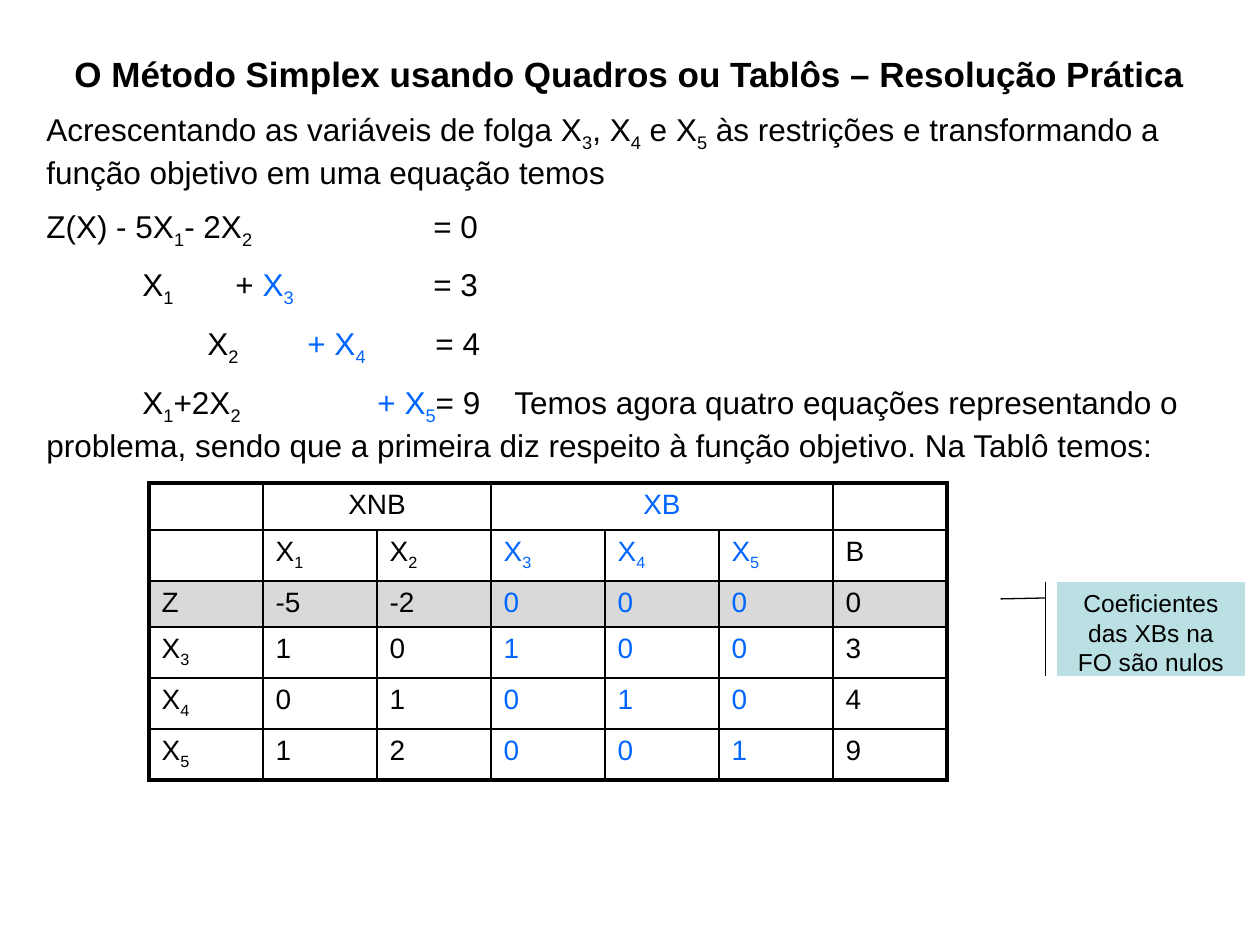
from lxml.etree import SubElement
from pptx import Presentation
from pptx.dml.color import RGBColor
from pptx.enum.shapes import MSO_SHAPE
from pptx.enum.text import MSO_ANCHOR, MSO_AUTO_SIZE, PP_ALIGN
from pptx.oxml.ns import qn
from pptx.util import Emu, Pt

PX_PER_INCH = 126
BLACK, BLUE, GREY, TEAL = "000000", "0066FF", "D9D9D9", "BBE0E3"
THIN, THICK = 1, 2.25

TITLE = "O Método Simplex usando Quadros ou Tablôs – Resolução Prática"

# In texts, "_" lowers the next character and "~" switches blue on and off.
# Each paragraph comes with the tab stops that line up its terms.
PARAGRAPHS = [
    ("Acrescentando as variáveis de folga X_3, X_4 e X_5 às restrições e "
     "transformando a função objetivo em uma equação temos", []),
    ("Z(X) - 5X_1- 2X_2\t= 0", [387]),
    ("\tX_1\t+ ~X_3~\t= 3", [96, 189, 387]),
    ("\tX_2\t~+ X_4~\t= 4", [161, 261, 389]),
    ("\tX_1+2X_2\t~+ X_5~= 9\tTemos agora quatro equações representando o "
     "problema, sendo que a primeira diz respeito à função objetivo. "
     "Na Tablô temos:", [96, 331, 468]),
]

TABLEAU = [
    ["", "XNB", "", "XB", "", "", ""],
    ["", "X_1", "X_2", "X_3", "X_4", "X_5", "B"],
    ["Z", "-5", "-2", "0", "0", "0", "0"],
    ["X_3", "1", "0", "1", "0", "0", "3"],
    ["X_4", "0", "1", "0", "1", "0", "4"],
    ["X_5", "1", "2", "0", "0", "1", "9"],
]
ROW_HEIGHTS = [45, 51, 46, 51, 51, 51]
BASIC_COLUMNS = range(3, 6)
OBJECTIVE_ROW = 2


def px(length):
    return Emu(round(length * 914400 / PX_PER_INCH))


def rgb(value):
    return RGBColor.from_string(value)


def add_span(para, text, size, color, bold=False, lowered=False):
    if not text:
        return
    span = para.add_run()
    span.text = text
    span.font.name = "Arial"
    span.font.size = Pt(size)
    span.font.bold = bold
    span.font.color.rgb = rgb(color)
    if lowered:
        span.font._element.set("baseline", "-25000")


def write(para, text, size=18, color=BLACK, bold=False, align=PP_ALIGN.LEFT):
    para.alignment = align
    for part_index, part in enumerate(text.split("~")):
        shade = BLUE if part_index % 2 else color
        for index, piece in enumerate(part.split("_")):
            if index:
                add_span(para, piece[0], size, shade, bold, lowered=True)
                piece = piece[1:]
            add_span(para, piece, size, shade, bold)


def prepare_frame(shape):
    frame = shape.text_frame
    frame.word_wrap = True
    frame.auto_size = MSO_AUTO_SIZE.NONE
    frame.vertical_anchor = MSO_ANCHOR.TOP
    return frame


def set_tabs(para, tabs):
    if tabs:
        stops = SubElement(para._p.get_or_add_pPr(), qn("a:tabLst"))
        for tab in tabs:
            SubElement(stops, qn("a:tab"), pos=str(px(tab)), algn="l")


def add_title(page, box):
    title = page.shapes.title
    title.left, title.top, title.width, title.height = map(px, box)
    write(prepare_frame(title).paragraphs[0], TITLE, size=20, bold=True,
          align=PP_ALIGN.CENTER)


def add_equations(page, box):
    # A plain text box, because inherited list indents override tab stops
    frame = prepare_frame(page.shapes.add_textbox(*map(px, box)))
    for index, (text, tabs) in enumerate(PARAGRAPHS):
        para = frame.add_paragraph() if index else frame.paragraphs[0]
        para.space_before = Pt(9 if index else 0)
        set_tabs(para, tabs)
        write(para, text)


def set_borders(cell, row, column, last_row, last_column):
    outer = {"L": column == 0, "R": column == last_column,
             "T": row == 0, "B": row == last_row}
    properties = cell._tc.get_or_add_tcPr()
    for side, is_outer in outer.items():
        width = Pt(THICK if is_outer else THIN)
        line = SubElement(properties, qn(f"a:ln{side}"), w=str(width))
        fill = SubElement(line, qn("a:solidFill"))
        SubElement(fill, qn("a:srgbClr"), val=BLACK)


def add_tableau(page, box):
    row_count, column_count = len(TABLEAU), len(TABLEAU[0])
    table = page.shapes.add_table(row_count, column_count, *map(px, box)).table
    table.first_row = table.horz_banding = False
    for column in table.columns:
        column.width = px(box[2] / column_count)
    for row, height in zip(table.rows, ROW_HEIGHTS):
        row.height = px(height)

    # Header groups: non-basic and basic variables
    table.cell(0, 1).merge(table.cell(0, 2))
    table.cell(0, 3).merge(table.cell(0, 5))

    for r, values in enumerate(TABLEAU):
        for c, text in enumerate(values):
            cell = table.cell(r, c)
            set_borders(cell, r, c, row_count - 1, column_count - 1)
            if r == OBJECTIVE_ROW:
                cell.fill.solid()
                cell.fill.fore_color.rgb = rgb(GREY)
            else:
                cell.fill.background()
            para = cell.text_frame.paragraphs[0]
            write(para, text, size=16,
                  color=BLUE if c in BASIC_COLUMNS else BLACK,
                  align=PP_ALIGN.LEFT if r else PP_ALIGN.CENTER)
            # Keeps empty cells from growing their row
            SubElement(para._p, qn("a:endParaRPr"), sz="1600")


def add_callout(page, box):
    callout = page.shapes.add_shape(MSO_SHAPE.LINE_CALLOUT_1_ACCENT_BAR,
                                    *map(px, box))
    for index, value in enumerate([0.17, -0.06, 0.18, -0.3]):
        callout.adjustments[index] = value
    callout.shadow.inherit = False
    callout.fill.solid()
    callout.fill.fore_color.rgb = rgb(TEAL)
    callout.line.color.rgb = rgb(BLACK)
    callout.line.width = Pt(0.75)
    write(prepare_frame(callout).paragraphs[0],
          "Coeficientes das XBs na FO são nulos", size=14,
          align=PP_ALIGN.CENTER)


def main():
    deck = Presentation()
    deck.slide_width, deck.slide_height = px(1260), px(945)
    page = deck.slides.add_slide(deck.slide_layouts[5])
    add_title(page, (34, 46, 1191, 52))
    add_equations(page, (34, 104, 1191, 356))
    add_tableau(page, (149, 483, 798, sum(ROW_HEIGHTS)))
    add_callout(page, (1057, 582, 188, 94))
    deck.save("out.pptx")


if __name__ == "__main__":
    main()
